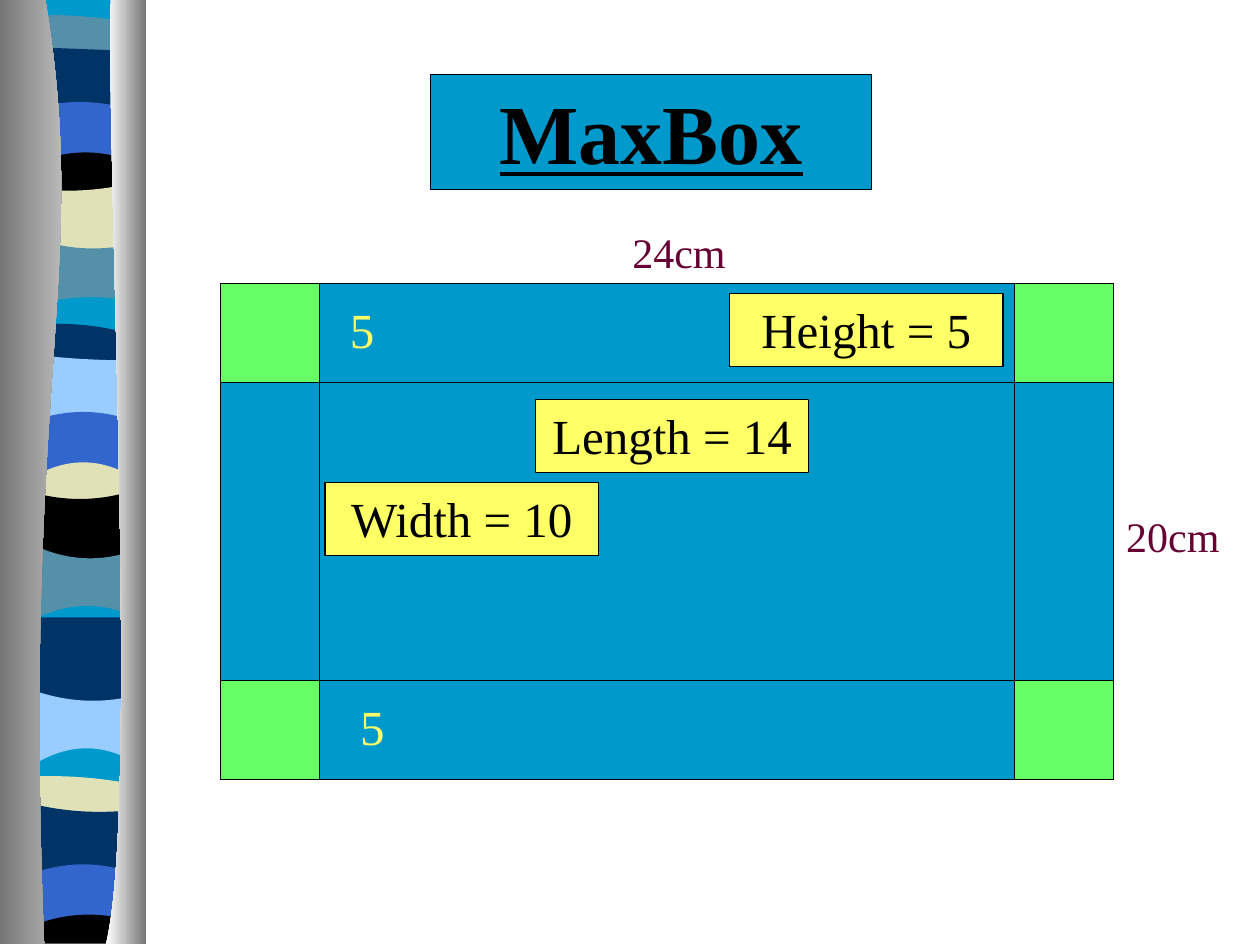
"""Build the MaxBox slide: a flat box net beside a wavy ribbon border."""
from lxml import etree
from pptx import Presentation
from pptx import util as u
from pptx.dml.color import RGBColor
from pptx.enum import shapes, text
from pptx.oxml.ns import qn

FONT = "Times New Roman"
COLORS = {
    "blue": "0099CC", "teal": "5490A8", "navy": "003366", "royal": "3366CC",
    "black": "000000", "sand": "E1E1B7", "sky": "99CCFF", "green": "66FF66",
    "yellow": "FFFF66", "wine": "660033", "dark": "767676", "light": "D9D9D9",
    "white": "FFFFFF",
}

RIBBON_LEFT, RIBBON_RIGHT, RIBBON_BOTTOM = 0.06, 1.14, 7.47
BAND_X = (0.4, 0.66, 0.92)
BANDS = [
    ("teal", 0.12, 0.13, 0.16), ("navy", 0.38, 0.39, 0.4),
    ("royal", 0.83, 0.81, 0.84), ("black", 1.25, 1.21, 1.24),
    ("sand", 1.51, 1.51, 1.48), ("teal", 1.93, 1.97, 1.96),
    ("blue", 2.39, 2.36, 2.37), ("navy", 2.57, 2.58, 2.62),
    ("sky", 2.83, 2.85, 2.86), ("royal", 3.3, 3.27, 3.3),
    ("sand", 3.72, 3.67, 3.72), ("black", 3.94, 3.96, 3.93),
    ("teal", 4.38, 4.43, 4.41), ("blue", 4.86, 4.81, 4.84),
    ("navy", 4.9, 4.9, 4.9), ("sky", 5.52, 5.56, 5.55),
    ("blue", 6, 5.94, 5.98), ("sand", 6.16, 6.17, 6.2),
    ("navy", 6.41, 6.44, 6.44), ("royal", 6.89, 6.86, 6.89),
    ("black", 7.3, 7.26, 7.28), ("blue", 7.49, 7.49, 7.49),
]
CURTAINS = [
    (0, [(0.36, 0), (0.72, 2.16), (0.17, 2.96), (0.35, 7.49)], "dark", "light"),
    (1.16, [(0.88, 0), (0.84, 1.25), (1.11, 6.46), (0.84, 7.49)], "white", "dark"),
]

NET_LEFT, NET_TOP, UNIT = 1.75, 2.25, 7.09 / 9
COLS, ROWS = 9, 5
TAG_SIZE = (2.17, 0.58)
TAGS = [("Width = 10", 2.58, 3.83), ("Height = 5", 5.79, 2.33), ("Length = 14", 4.25, 3.17)]
CUTS = [("5", 2.64, 5.48), ("5", 2.56, 2.33)]
SIDES = [("24cm", 4.92, 1.75), ("20cm", 8.84, 4)]


def rgb(name):
    return RGBColor.from_string(COLORS[name])


def add_outline(s, points, curves=()):
    start, *rest = [(u.Inches(x), u.Inches(y)) for x, y in points]
    builder = s.shapes.build_freeform(*start)
    builder.add_line_segments(rest, close=True)
    sp = builder.convert_to_shape()
    sp.shadow.inherit = False
    sp.line.fill.background()
    lines = list(sp._element.iter(qn("a:lnTo")))
    for i in curves:
        bend = etree.Element(qn("a:cubicBezTo"))
        lines[i].addprevious(bend)
        for line in lines[i:i + 3]:
            bend.append(line[0])
            line.getparent().remove(line)
    return sp


def fill_solid(sp, color):
    sp.fill.solid()
    sp.fill.fore_color.rgb = rgb(color)


def parabola(x, heights):
    a, b, c = BAND_X
    ya, yb, yc = heights
    return (ya * (x - b) * (x - c) / ((a - b) * (a - c))
            + yb * (x - a) * (x - c) / ((b - a) * (b - c))
            + yc * (x - a) * (x - b) / ((c - a) * (c - b)))


def wave(heights, drop=0):
    width = RIBBON_RIGHT - RIBBON_LEFT
    y0, ym, y3 = (parabola(RIBBON_LEFT + width * t, heights) + drop for t in (0, 0.5, 1))
    pull = 2 * ym - (y0 + y3) / 2
    ys = (y0, (y0 + 2 * pull) / 3, (y3 + 2 * pull) / 3, y3)
    return [(RIBBON_LEFT + width * i / 3, y) for i, y in enumerate(ys)]


def draw_ribbon(s):
    base = add_outline(s, [(RIBBON_LEFT, 0), (RIBBON_RIGHT, 0),
                           (RIBBON_RIGHT, RIBBON_BOTTOM), (RIBBON_LEFT, RIBBON_BOTTOM)])
    fill_solid(base, "blue")
    for (color, *top), (below, *bottom) in zip(BANDS, BANDS[1:]):
        if color != "blue":
            overlap = 0 if below == "blue" else 0.03
            points = wave(top) + wave(bottom, overlap)[::-1]
            fill_solid(add_outline(s, points, curves=(0, 4)), color)
    for side, curve, start, end in CURTAINS:
        sp = add_outline(s, curve + [(side, 7.49), (side, 0)], curves=(0,))
        sp.fill.gradient()
        sp.fill.gradient_angle = 0
        for stop, color, position in zip(sp.fill.gradient_stops, (start, end), (0, 1)):
            stop.color.rgb = rgb(color)
            stop.position = position


def paint(sp, fill, width=0.75):
    fill_solid(sp, fill)
    sp.line.color.rgb = rgb("black")
    sp.line.width = u.Pt(width)


def add_rect(s, x, y, w, h, fill):
    sp = s.shapes.add_shape(shapes.MSO_SHAPE.RECTANGLE, *map(u.Inches, (x, y, w, h)))
    sp.shadow.inherit = False
    paint(sp, fill)
    return sp


def add_fold(s, x1, y1, x2, y2):
    line = s.shapes.add_connector(
        shapes.MSO_CONNECTOR.STRAIGHT, *map(u.Inches, (x1, y1, x2, y2)))
    line.line.color.rgb = rgb("black")
    line.line.width = u.Pt(0.75)
    etree.SubElement(line._element.spPr, qn("a:effectLst"))


def write(sp, words, size=28, color="black", align=text.PP_ALIGN.CENTER,
          bold=False, underline=False):
    tf = sp.text_frame
    tf.word_wrap = True
    tf.auto_size = text.MSO_AUTO_SIZE.NONE
    tf.vertical_anchor = text.MSO_ANCHOR.TOP
    p = tf.paragraphs[0]
    p.alignment = align
    r = p.add_run()
    r.text = words
    r.font.name, r.font.size = FONT, u.Pt(size)
    r.font.bold, r.font.underline = bold, underline
    r.font.color.rgb = rgb(color)


def add_label(s, words, x, y, w, h, **fmt):
    write(s.shapes.add_textbox(*map(u.Inches, (x, y, w, h))), words, **fmt)


def draw_net(s):
    right, bottom = NET_LEFT + COLS * UNIT, NET_TOP + ROWS * UNIT
    add_rect(s, NET_LEFT, NET_TOP, COLS * UNIT, ROWS * UNIT, "blue")
    for x in (NET_LEFT, right - UNIT):
        for y in (NET_TOP, bottom - UNIT):
            add_rect(s, x, y, UNIT, UNIT, "green")
    for y in (NET_TOP + UNIT, bottom - UNIT):
        add_fold(s, NET_LEFT + UNIT, y, right - UNIT, y)
    for x in (NET_LEFT + UNIT, right - UNIT):
        add_fold(s, x, NET_TOP + UNIT, x, bottom - UNIT)


def main():
    prs = Presentation()
    prs.slide_width, prs.slide_height = u.Inches(10), u.Inches(7.5)
    s = prs.slides.add_slide(prs.slide_layouts[5])
    draw_ribbon(s)
    title = s.shapes.title
    title.left, title.top, title.width, title.height = map(u.Inches, (3.42, 0.59, 3.5, 0.91))
    paint(title, "blue", 0.5)
    write(title, "MaxBox", size=48, bold=True, underline=True)
    draw_net(s)
    for words, x, y in SIDES:
        add_label(s, words, x, y, 1.16, 0.5, size=24, color="wine", align=text.PP_ALIGN.LEFT)
    for words, x, y in CUTS:
        add_label(s, words, x, y, 0.63, 0.57, color="yellow")
    for words, x, y in TAGS:
        write(add_rect(s, x, y, *TAG_SIZE, "yellow"), words)
    prs.save("out.pptx")


if __name__ == "__main__":
    main()
